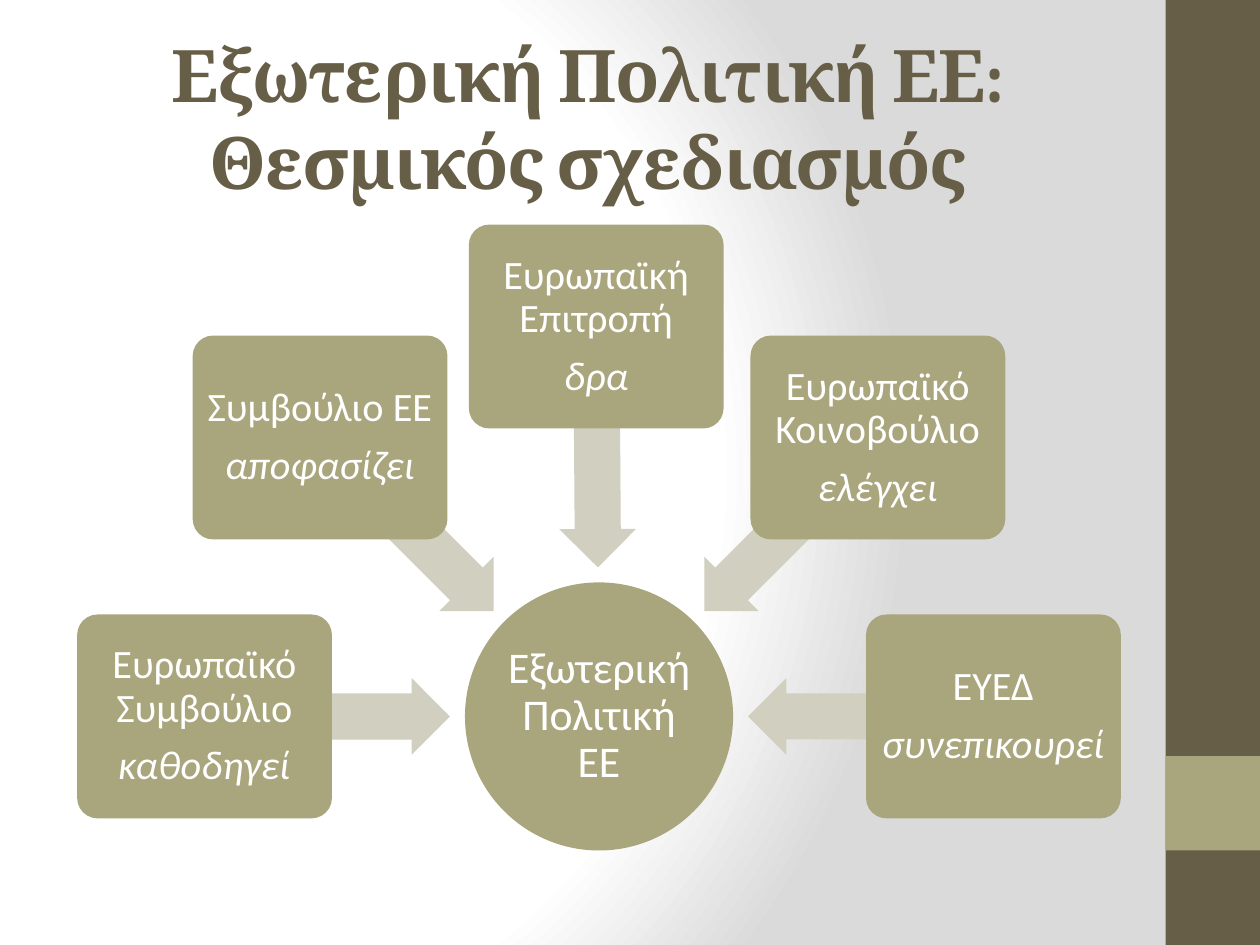
from dataclasses import dataclass
from math import cos, radians, sin

from lxml import etree
from pptx import Presentation
from pptx.dml.color import RGBColor
from pptx.enum.shapes import MSO_SHAPE
from pptx.enum.text import MSO_ANCHOR, PP_ALIGN
from pptx.oxml import parse_xml
from pptx.oxml.ns import nsdecls, qn
from pptx.shapes.autoshape import Shape
from pptx.slide import Slide
from pptx.text.text import TextFrame
from pptx.util import Pt

RECTANGLE = MSO_SHAPE.RECTANGLE
ROUNDED = MSO_SHAPE.ROUNDED_RECTANGLE
OVAL = MSO_SHAPE.OVAL
LEFT_ARROW = MSO_SHAPE.LEFT_ARROW
MIDDLE = MSO_ANCHOR.MIDDLE
CENTER = PP_ALIGN.CENTER

BROWN = RGBColor(0x67, 0x5E, 0x47)
OLIVE = RGBColor(0xA9, 0xA5, 0x7C)
PALE_OLIVE = RGBColor(0xD1, 0xCF, 0xBF)
WHITE = RGBColor(0xFF, 0xFF, 0xFF)
LIGHT_GREY = RGBColor(0xDA, 0xDA, 0xDA)

SLIDE_WIDTH, SLIDE_HEIGHT = 720, 540
SIDEBAR_LEFT, SIDEBAR_WIDTH = 666, 54
HUB_X, HUB_Y, HUB_SIZE = 342.3, 409.4, 153.2
BOX_WIDTH, BOX_HEIGHT = 145.6, 116.5
ARROW_START, ARROW_THICKNESS = 85.2, 43.9


@dataclass(frozen=True)
class Institution:
    name: str
    role: str
    angle: float
    reach: float = 225.4


INSTITUTIONS = [
    Institution("Ευρωπαϊκό Συμβούλιο", "καθοδηγεί", 180),
    Institution("Συμβούλιο ΕΕ", "αποφασίζει", 225),
    Institution("Ευρωπαϊκή Επιτροπή", "δρα", 269.6, 222.8),
    Institution("Ευρωπαϊκό Κοινοβούλιο", "ελέγχει", 315),
    Institution("ΕΥΕΔ", "συνεπικουρεί", 0),
]


def add_filled(slide: Slide, preset: MSO_SHAPE, left: float, top: float,
               width: float, height: float, color: RGBColor) -> Shape:
    shape = slide.shapes.add_shape(preset, Pt(left), Pt(top), Pt(width), Pt(height))
    shape.shadow.inherit = False
    shape.fill.solid()
    shape.fill.fore_color.rgb = color
    shape.line.fill.background()
    return shape


def add_on_spoke(slide: Slide, preset: MSO_SHAPE, angle: float, distance: float,
                 width: float, height: float, color: RGBColor) -> Shape:
    center_x = HUB_X + distance * cos(radians(angle))
    center_y = HUB_Y + distance * sin(radians(angle))
    return add_filled(slide, preset, center_x - width / 2, center_y - height / 2,
                      width, height, color)


def format_frame(frame: TextFrame, size: float, font: str, color: RGBColor,
                 inset_x: float, inset_y: float) -> None:
    frame.word_wrap = True
    frame.vertical_anchor = MIDDLE
    frame.margin_left = frame.margin_right = Pt(inset_x)
    frame.margin_top = frame.margin_bottom = Pt(inset_y)
    for paragraph in frame.paragraphs:
        paragraph.alignment = CENTER
        for run in paragraph.runs:
            run.font.size = Pt(size)
            run.font.name = font
            run.font.color.rgb = color


def write_label(shape: Shape, text: str, size: float, inset: float) -> None:
    frame = shape.text_frame
    frame.text = text
    format_frame(frame, size, "Calibri", WHITE, inset, inset)
    for paragraph in frame.paragraphs:
        paragraph.line_spacing = 0.9
        paragraph.space_after = Pt(size * 0.35)


def draw_background(slide: Slide) -> None:
    fill = slide.background.fill
    fill.solid()
    fill.fore_color.rgb = WHITE
    properties = slide.background._cSld.find(qn("p:bg")).find(qn("p:bgPr"))
    gradient = parse_xml(f'<a:gradFill {nsdecls("a")} rotWithShape="1"/>')
    stops = etree.SubElement(gradient, qn("a:gsLst"))
    for position, color in ((0, WHITE), (75, WHITE), (100, LIGHT_GREY)):
        stop = etree.SubElement(stops, qn("a:gs"), pos=str(position * 1000))
        etree.SubElement(stop, qn("a:srgbClr"), val=str(color))
    circle = etree.SubElement(gradient, qn("a:path"), {"path": "circle"})
    etree.SubElement(circle, qn("a:fillToRect"), l="20000", t="50000", r="100000", b="50000")
    properties.replace(properties.find(qn("a:solidFill")), gradient)


def draw_title(slide: Slide) -> None:
    title = slide.shapes.add_textbox(Pt(36), Pt(21.6), Pt(600), Pt(90))
    frame = title.text_frame
    frame.text = "Εξωτερική Πολιτική ΕΕ:\vΘεσμικός σχεδιασμός"
    format_frame(frame, 41.4, "Cambria", BROWN, 7.2, 3.6)
    for run in frame.paragraphs[0].runs:
        run.font.bold = True
        run.font._element.set("spc", "-100")


def draw_institution(slide: Slide, institution: Institution) -> None:
    length = institution.reach - ARROW_START
    arrow = add_on_spoke(slide, LEFT_ARROW, institution.angle, ARROW_START + length / 2,
                         length, ARROW_THICKNESS, PALE_OLIVE)
    arrow.adjustments[0] = 0.6
    arrow.adjustments[1] = 0.5
    arrow.rotation = institution.angle

    box = add_on_spoke(slide, ROUNDED, institution.angle, institution.reach,
                       BOX_WIDTH, BOX_HEIGHT, OLIVE)
    box.adjustments[0] = 0.1
    write_label(box, f"{institution.name}\n{institution.role}", 23, 3.6)
    box.text_frame.paragraphs[1].runs[0].font.italic = True


def main() -> None:
    presentation = Presentation()
    presentation.slide_width = Pt(SLIDE_WIDTH)
    presentation.slide_height = Pt(SLIDE_HEIGHT)
    slide = presentation.slides.add_slide(presentation.slide_layouts[6])

    draw_background(slide)
    add_filled(slide, RECTANGLE, SIDEBAR_LEFT, 0, SIDEBAR_WIDTH, SLIDE_HEIGHT, BROWN)
    add_filled(slide, RECTANGLE, SIDEBAR_LEFT, 432, SIDEBAR_WIDTH, SIDEBAR_WIDTH, OLIVE)
    draw_title(slide)

    hub = add_on_spoke(slide, OVAL, 0, 0, HUB_SIZE, HUB_SIZE, OLIVE)
    write_label(hub, "Εξωτερική Πολιτική ΕΕ", 25, 1.44)
    for institution in INSTITUTIONS:
        draw_institution(slide, institution)

    presentation.save("out.pptx")


if __name__ == "__main__":
    main()
